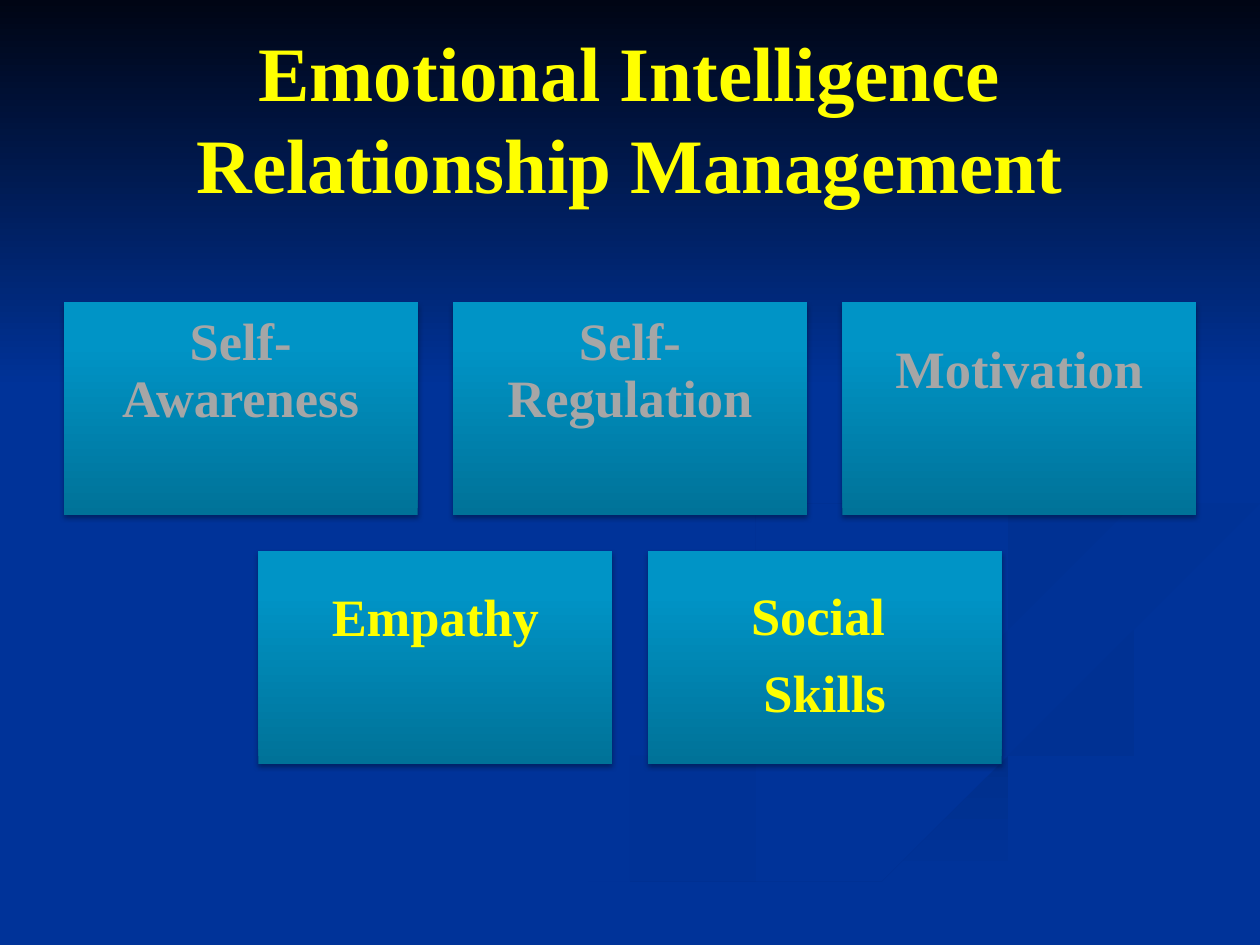
import pptx
import pptx.dml.color
import pptx.enum.shapes
import pptx.enum.text
import pptx.oxml
import pptx.oxml.ns
import pptx.util
from lxml import etree

Inches, Pt = pptx.util.Inches, pptx.util.Pt
RGBColor = pptx.dml.color.RGBColor
RECTANGLE = pptx.enum.shapes.MSO_SHAPE.RECTANGLE
MIDDLE = pptx.enum.text.MSO_ANCHOR.MIDDLE
BLUE = RGBColor(0x00, 0x33, 0x99)
NIGHT = RGBColor(0x00, 0x05, 0x14)
WAVE_BLUE = RGBColor(0x00, 0x31, 0x93)
DEEP_BLUE = RGBColor(0x00, 0x2F, 0x8C)
TEAL = RGBColor(0x00, 0x72, 0x98)
CYAN = RGBColor(0x00, 0x94, 0xC6)
YELLOW = RGBColor(0xFF, 0xFF, 0x00)
GRAY = RGBColor(0xA6, 0xA6, 0xA6)
FONT = "Times New Roman"

SLIDE_W, SLIDE_H = 10, 7.5
NIGHT_H = 3.08
TITLE = "Emotional Intelligence\vRelationship Management"
# Rows of boxes: text colour and the paragraphs of each box
ROWS = [
    (GRAY, [["Self-Awareness"], ["Self-Regulation"], ["Motivation"]]),
    (YELLOW, [["Empathy"], ["Social ", "Skills"]]),
]
BOX_W, BOX_H, GAP, ROWS_TOP = 2.81, 1.69, 0.28, 2.4
INSET, ONE_LINE_BOTTOM = 0.12, 0.71

# Background waves: first colour, last colour, clockwise angle, two curved edges
WAVES = [
    (BLUE, WAVE_BLUE, 0,
     [(5.75, 4.59), (5.93, 4.91), (7.62, 5.47), (7.8, 5.79), (5.39, 6.49), (3, 7.49)],
     [(3.61, 7.49), (5.64, 6.65), (7.69, 6.09), (8, 5.81), (7.31, 5.33), (5.94, 4.85)]),
    (BLUE, WAVE_BLUE, 45,
     [(7.24, 4.64), (7.58, 4.98), (9.05, 5.4), (9.43, 5.7), (8.94, 6.05)],
     [(9.18, 5.81), (8.92, 5.53), (7.66, 5.12)]),
    (DEEP_BLUE, BLUE, 90,
     [(5.03, 7.49), (6.96, 6.69), (8.67, 6.2), (9.98, 5.81)],
     [(9.98, 6.09), (7.85, 6.61), (5.71, 7.49)]),
    (WAVE_BLUE, BLUE, 45,
     [(8.26, 4.96), (7.81, 4.6), (8.35, 4.3), (9.98, 4.02)],
     [(9.98, 4.2), (8.59, 4.43), (8.05, 4.72)]),
    (DEEP_BLUE, BLUE, 45,
     [(7.62, 2.33), (8.89, 3.35), (8.3, 3.82), (6.15, 4.29), (5.77, 4.62), (6.22, 5)],
     [(5.94, 4.65), (6.83, 4.3), (8.55, 3.91), (8.94, 3.44), (8.43, 2.75)]),
]
CURVE_STEPS = 6


def smooth(edge):
    """Return points on a Catmull-Rom curve through the edge."""
    padded = [edge[0], *edge, edge[-1]]
    curve = []
    for a, b, c, d in zip(padded, padded[1:], padded[2:], padded[3:]):
        for step in range(CURVE_STEPS):
            t = step / CURVE_STEPS
            curve.append(tuple(
                q + t / 2 * (r - p + t * (2 * p - 5 * q + 4 * r - s
                                          + t * (3 * (q - r) + s - p)))
                for p, q, r, s in zip(a, b, c, d)))
    return curve + [edge[-1]]


def paint(shape, first, last, angle, last_position=1):
    """Fill with a gradient at a clockwise angle, without line or shadow."""
    shape.fill.gradient()
    shape.fill.gradient_angle = (360 - angle) % 360
    stops = shape.fill.gradient_stops
    for stop, color, position in zip(stops, (first, last), (0, last_position)):
        stop.color.rgb = color
        stop.position = position
    shape.line.fill.background()
    shape.shadow.inherit = False


def add_drop_shadow(shape):
    qn = pptx.oxml.ns.qn
    effects = shape.element.spPr.find(qn("a:effectLst"))
    shadow = etree.SubElement(effects, qn("a:outerShdw"), blurRad="40000",
                              dist="23000", dir="5400000", rotWithShape="0")
    black = etree.SubElement(shadow, qn("a:srgbClr"), val="000000")
    etree.SubElement(black, qn("a:alpha"), val="35000")


def style(paragraph, size, color):
    paragraph.alignment = pptx.enum.text.PP_ALIGN.CENTER
    paragraph.font.name = FONT
    paragraph.font.size = Pt(size)
    paragraph.font.bold = True
    paragraph.font.color.rgb = color


def add_wave(slide, first, last, angle, outer, inner):
    start, *rest = smooth(outer) + smooth(inner)
    builder = slide.shapes.build_freeform(*start, scale=Inches(1))
    builder.add_line_segments(rest, close=True)
    paint(builder.convert_to_shape(), first, last, angle)


def add_title(slide):
    title = slide.shapes.add_textbox(Inches(0.5), Inches(0.3), Inches(9), Inches(1.25))
    frame = title.text_frame
    frame.word_wrap = True
    frame.vertical_anchor = MIDDLE
    frame.text = TITLE
    style(frame.paragraphs[0], 44, YELLOW)


def add_box(slide, left, top, lines, color):
    box = slide.shapes.add_shape(
        RECTANGLE, Inches(left), Inches(top), Inches(BOX_W), Inches(BOX_H))
    paint(box, TEAL, CYAN, 270, last_position=0.8)
    add_drop_shadow(box)
    frame = box.text_frame
    frame.word_wrap = True
    frame.vertical_anchor = MIDDLE
    frame.margin_left = frame.margin_right = frame.margin_top = Inches(INSET)
    frame.margin_bottom = Inches(ONE_LINE_BOTTOM if len(lines) == 1 else INSET)
    frame.text = "\n".join(lines)
    for paragraph in frame.paragraphs:
        style(paragraph, 30, color)
        paragraph.line_spacing = 0.9
    for paragraph in frame.paragraphs[:-1]:
        paragraph.space_after = Pt(12)


def main():
    deck = pptx.Presentation()
    deck.slide_width, deck.slide_height = Inches(SLIDE_W), Inches(SLIDE_H)
    slide = deck.slides.add_slide(deck.slide_layouts[6])
    slide.background.fill.solid()
    slide.background.fill.fore_color.rgb = BLUE
    for wave in WAVES:
        add_wave(slide, *wave)
    night_sky = slide.shapes.add_shape(
        RECTANGLE, 0, 0, Inches(SLIDE_W), Inches(NIGHT_H))
    paint(night_sky, NIGHT, BLUE, 90)
    add_title(slide)
    for row, (color, boxes) in enumerate(ROWS):
        row_width = len(boxes) * (BOX_W + GAP) - GAP
        for column, lines in enumerate(boxes):
            left = (SLIDE_W - row_width) / 2 + column * (BOX_W + GAP)
            add_box(slide, left, ROWS_TOP + row * (BOX_H + GAP), lines, color)
    deck.save("out.pptx")


if __name__ == "__main__":
    main()
